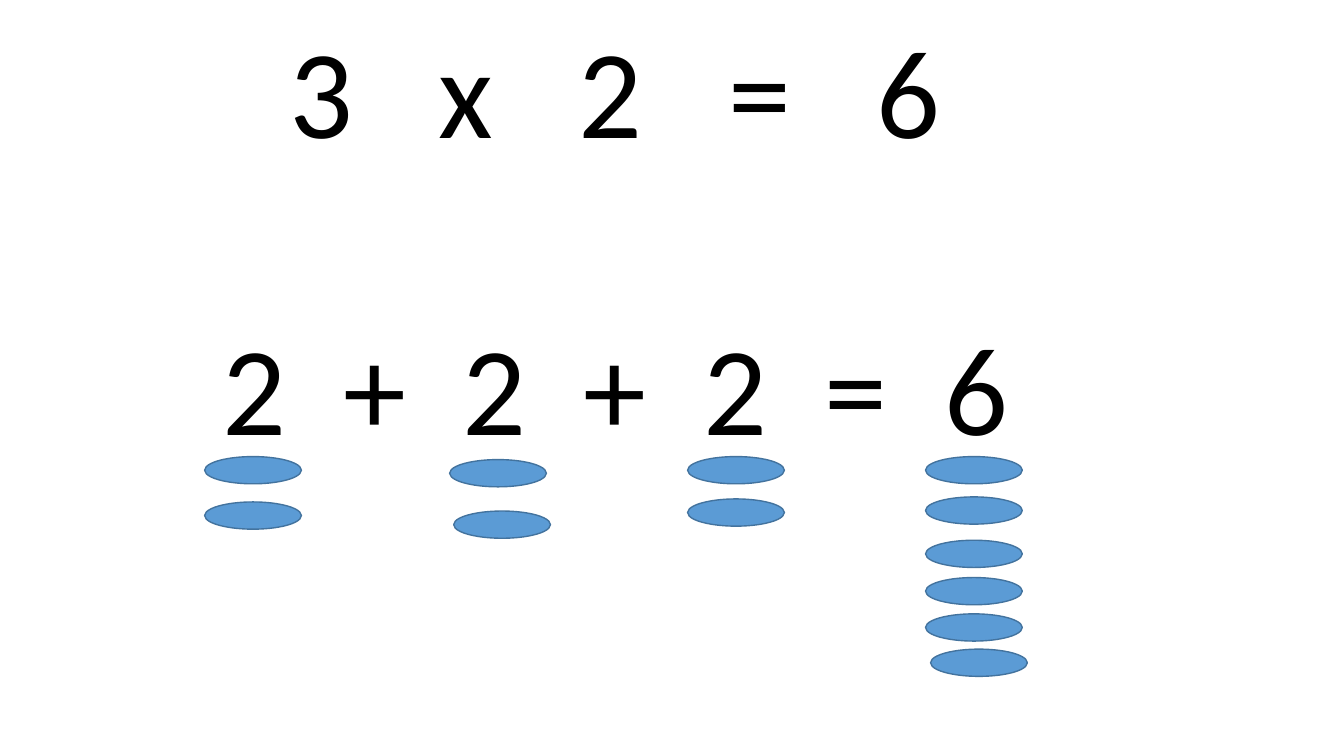
from dataclasses import dataclass
from lxml.etree import SubElement as Sub
from pptx import Presentation
from pptx.dml.color import RGBColor as Rgb
from pptx.enum.shapes import MSO_SHAPE as Kind
from pptx.enum.text import MSO_ANCHOR as Anchor, MSO_AUTO_SIZE as Fit, PP_ALIGN as Align
from pptx.oxml.ns import qn
from pptx.util import Inches, Pt

HUES = {"text": "000000", "disc": "5B9BD5", "edge": "43739E"}
SIZE = 90
SPACE = 0.226 * SIZE


@dataclass
class Sum:
    text: str
    gap: int
    before: float


@dataclass
class Stack:
    left: float
    tops: list[float]
    shift: float = 0


SUMS = [Sum("3 x 2 = 6", 3, 10), Sum("2 + 2 + 2 = 6", 2, 115.5)]
STACKS = [
    Stack(2.03, [4.53, 4.98]),
    Stack(4.46, [4.56, 5.07], 0.04),
    Stack(6.82, [4.53, 4.95]),
    Stack(9.18, [4.53, 4.93, 5.36, 5.73, 6.09, 6.44], 0.05),
]


def style(item, form: dict) -> None:
    for name, value in form.items():
        setattr(item, name, value)


def write(line, part: Sum) -> None:
    style(line, {"alignment": Align.CENTER, "line_spacing": 0.9,
                 "space_before": Pt(part.before), "space_after": Pt(0)})
    props = line._p.get_or_add_pPr()
    props.set("marL", "0")
    props.set("indent", "0")
    Sub(props, qn("a:buNone"))
    for sign in part.text:
        run = line.add_run()
        run.text = sign
        style(run.font, {"name": "Calibri", "size": Pt(SIZE)})
        run.font.color.rgb = Rgb.from_string(HUES["text"])
        if sign == " ":
            extra = round((part.gap - 1) * SPACE * 100)
            run._r.get_or_add_rPr().set("spc", str(extra))


def draw(slide, stack: Stack) -> None:
    for top in stack.tops:
        left = stack.left + (stack.shift if top == stack.tops[-1] else 0)
        disc = slide.shapes.add_shape(
            Kind.OVAL, Inches(left), Inches(top), Inches(0.96), Inches(0.27))
        disc.shadow.inherit = False
        disc.fill.solid()
        disc.fill.fore_color.rgb = Rgb.from_string(HUES["disc"])
        disc.line.color.rgb = Rgb.from_string(HUES["edge"])
        disc.line.width = Pt(1)


def main() -> None:
    deck = Presentation()
    style(deck, {"slide_width": Inches(13.33), "slide_height": Inches(7.5)})
    slide = deck.slides.add_slide(deck.slide_layouts[1])
    title = slide.shapes.title.element
    title.getparent().remove(title)
    body = slide.placeholders[1]
    style(body, {"left": Inches(0.35), "top": Inches(0.24),
                 "width": Inches(11.5), "height": Inches(5.82)})
    frame = body.text_frame
    style(frame, {"word_wrap": True, "auto_size": Fit.NONE,
                  "vertical_anchor": Anchor.TOP})
    for spot, part in enumerate(SUMS):
        write(frame.add_paragraph() if spot else frame.paragraphs[0], part)
    for stack in STACKS:
        draw(slide, stack)
    deck.save("out.pptx")


if __name__ == "__main__":
    main()
